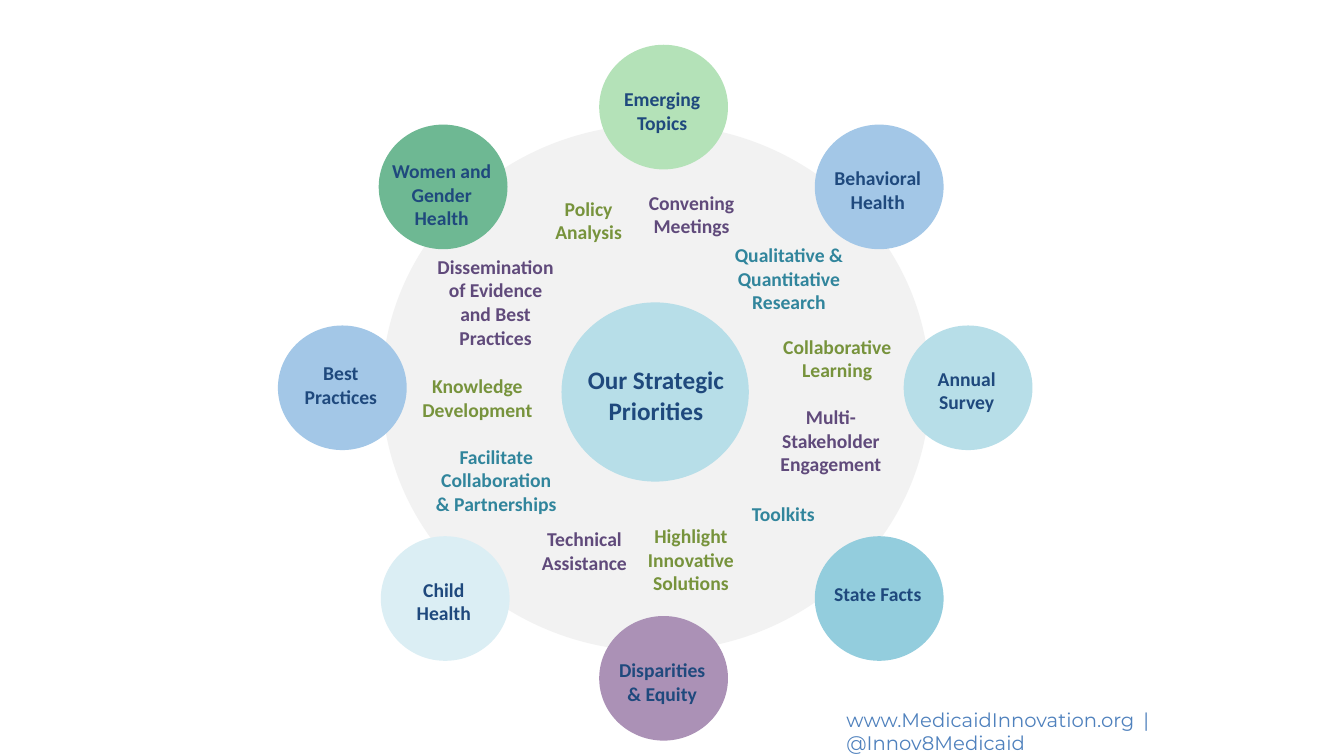
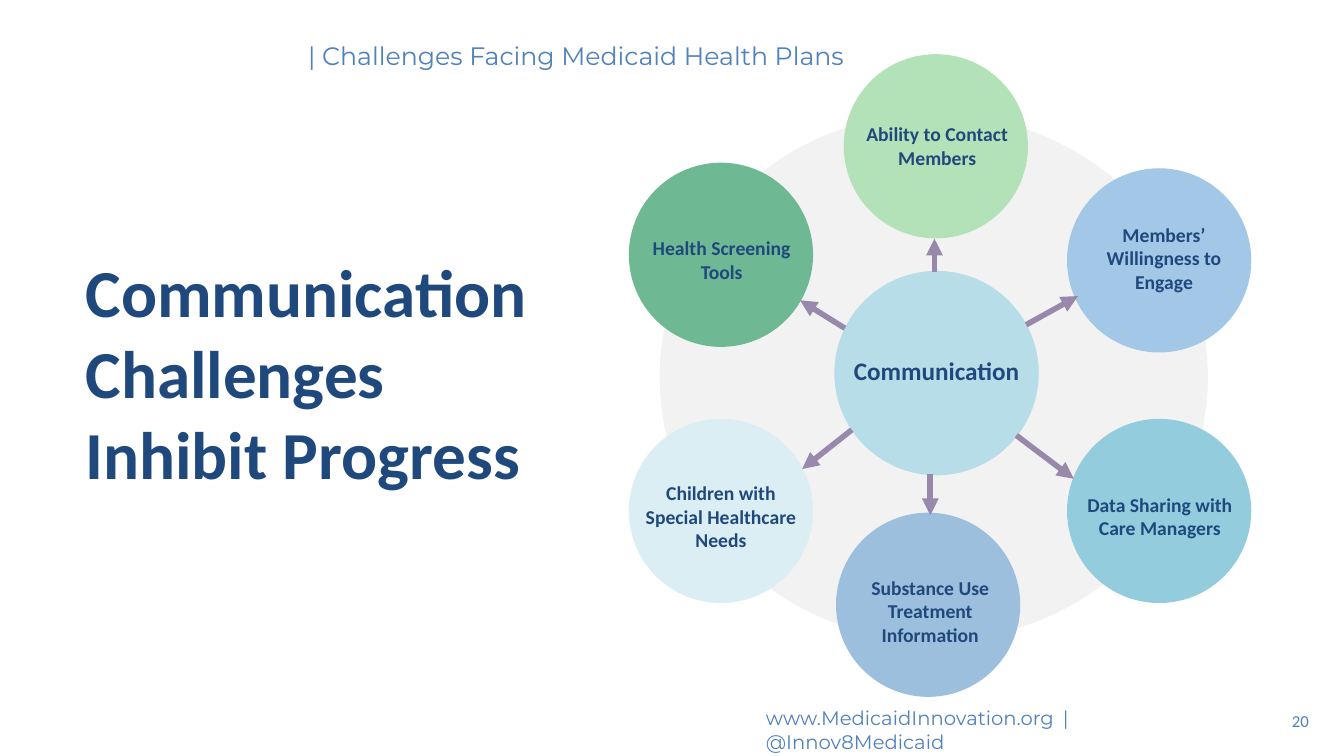
from dataclasses import dataclass

from lxml import etree
from pptx import Presentation
from pptx.dml.color import RGBColor
from pptx.enum.shapes import MSO_CONNECTOR, MSO_SHAPE
from pptx.enum.text import MSO_ANCHOR, MSO_AUTO_SIZE, PP_ALIGN
from pptx.oxml.ns import qn
from pptx.util import Pt

OVAL = MSO_SHAPE.OVAL
STRAIGHT = MSO_CONNECTOR.STRAIGHT
LEFT, CENTER, RIGHT = PP_ALIGN.LEFT, PP_ALIGN.CENTER, PP_ALIGN.RIGHT
TOP, MIDDLE = MSO_ANCHOR.TOP, MSO_ANCHOR.MIDDLE
FIT_HEIGHT = MSO_AUTO_SIZE.SHAPE_TO_FIT_TEXT


@dataclass(frozen=True)
class Theme:
    body_font: str = "Calibri"
    accent_font: str = "Montserrat"
    title_size: int = 48
    hub_size: int = 18
    label_size: int = 14
    number_size: int = 12
    navy: str = "1F497D"
    blue: str = "4F81BD"
    wheel: str = "F2F2F2"
    aqua: str = "B7DEE8"
    mint: str = "B4E2B8"
    green: str = "6EB893"
    sky: str = "A3C7E7"
    ice: str = "DBEEF4"
    mauve: str = "AB91B6"
    teal: str = "93CDDD"
    steel: str = "9CBFDD"
    arrow: str = "9888AC"
    olive_text: str = "77933C"
    teal_text: str = "31859C"
    purple_text: str = "604A7B"


THEME = Theme()


class Deck:
    def __init__(self, theme):
        self.theme = theme
        self.presentation = Presentation()
        self.presentation.slide_width = Pt(960)
        self.presentation.slide_height = Pt(540)
        self.slide = None

    def new_slide(self):
        self.slide = self.presentation.slides.add_slide(self.presentation.slide_layouts[6])

    def text(self, content, left, top, width, height, *, size=None, font=None, color=None,
             bold=False, align=LEFT, anchor=TOP, wrap=True):
        box = self.slide.shapes.add_textbox(Pt(left), Pt(top), Pt(width), Pt(height))
        frame = box.text_frame
        frame.word_wrap = wrap
        frame.vertical_anchor = anchor
        frame.text = content
        for paragraph in frame.paragraphs:
            paragraph.alignment = align
            for run in paragraph.runs:
                run.font.size = Pt(size or self.theme.label_size)
                run.font.name = font or self.theme.body_font
                run.font.bold = bold
                run.font.color.rgb = RGBColor.from_string(color or self.theme.navy)
        return frame

    def label(self, content, center_x, top, width, lines, **style):
        """Centred bold text whose box height follows its number of lines."""
        size = style.get("size", self.theme.label_size)
        frame = self.text(content, center_x - width / 2, top, width, 7.2 + lines * size * 1.2,
                          bold=True, align=CENTER, **style)
        frame.auto_size = FIT_HEIGHT

    def circle(self, center_x, center_y, width, height, color):
        disc = self.slide.shapes.add_shape(OVAL, Pt(center_x - width / 2), Pt(center_y - height / 2),
                                           Pt(width), Pt(height))
        disc.shadow.inherit = False
        disc.fill.solid()
        disc.fill.fore_color.rgb = RGBColor.from_string(color)
        disc.line.color.rgb = RGBColor.from_string(color)
        disc.line.width = Pt(2)

    def wheel(self, center_x, center_y):
        self.circle(center_x, center_y, 389.5, 374.4, self.theme.wheel)

    def arrow(self, start, end):
        spoke = self.slide.shapes.add_connector(STRAIGHT, *map(Pt, start + end))
        spoke.line.color.rgb = RGBColor.from_string(self.theme.arrow)
        spoke.line.width = Pt(4)
        etree.SubElement(spoke.line._get_or_add_ln(), qn("a:tailEnd"), type="triangle")
        etree.SubElement(spoke._element.spPr, qn("a:effectLst"))

    def footer(self, left, top):
        frame = self.text("www.MedicaidInnovation.org", left, top, 360, 24.5,
                          font=self.theme.accent_font, color=self.theme.blue, wrap=False)
        paragraph = frame.paragraphs[0]
        for content, spacing in ((" | ", "250"), ("@Innov8Medicaid", "0")):
            run = paragraph.add_run()
            run.text = content
            run.font.size = Pt(self.theme.label_size)
            run.font.name = self.theme.accent_font
            run.font.color.rgb = RGBColor.from_string(self.theme.blue)
            run._r.get_or_add_rPr().set("spc", spacing)


def build_priorities(deck):
    t = deck.theme
    deck.new_slide()
    deck.wheel(468.5, 277)
    deck.circle(468, 280, 131.8, 126, t.aqua)
    deck.label("Our Strategic Priorities", 468.5, 257, 126, 2, size=t.hub_size)

    # Colour, centre x, centre y, topic, label top, lines
    topics = (
        (t.mint, 474, 76.5, "Emerging Topics", 58.5, 2),
        (t.green, 316.5, 133.5, "Women and Gender Health", 110, 3),
        (t.sky, 244.5, 277, "Best\nPractices", 254.5, 2),
        (t.ice, 318, 427.5, "Child\nHealth", 409, 2),
        (t.mauve, 474, 484.5, "Disparities\n& Equity", 466.5, 2),
        (t.teal, 628, 427.5, "State Facts", 412, 1),
        (t.aqua, 691.5, 277, "Annual Survey", 258.5, 2),
        (t.sky, 628, 133.5, "Behavioral\nHealth", 115, 2),
    )
    for color, x, y, topic, label_top, lines in topics:
        deck.circle(x, y, 90, 87, color)
        deck.label(topic, x - 1, label_top, 97.2, lines)

    # Activity, centre x, top, width, lines, colour
    activities = (
        ("Knowledge Development", 341, 263.5, 97.2, 2, t.olive_text),
        ("Facilitate Collaboration & Partnerships", 354.5, 314, 103.7, 3, t.teal_text),
        ("Technical Assistance", 417.5, 373, 97.2, 2, t.purple_text),
        ("Highlight Innovative Solutions", 493.5, 371, 97.2, 3, t.olive_text),
        ("Multi-Stakeholder Engagement", 593.5, 286, 97.2, 3, t.purple_text),
        ("Collaborative Learning", 598, 235.5, 97.2, 2, t.olive_text),
        ("Qualitative & Quantitative Research", 563.5, 170, 97.2, 3, t.teal_text),
        ("Dissemination of Evidence and Best Practices", 354, 178.5, 100.8, 4, t.purple_text),
        ("Policy Analysis", 420.5, 137, 76.3, 2, t.olive_text),
        ("Convening Meetings", 494, 132.5, 76.3, 2, t.purple_text),
        ("Toolkits", 559.5, 355, 76.3, 1, t.teal_text),
    )
    for activity, x, top, width, lines, color in activities:
        deck.label(activity, x, top, width, lines, color=color)
    deck.footer(597.5, 502)


def build_challenges(deck):
    t = deck.theme
    deck.new_slide()
    deck.footer(540, 501)
    deck.text("20", 718, 500.5, 224, 28.8, size=t.number_size, color=t.blue,
              align=RIGHT, anchor=MIDDLE)
    deck.wheel(667, 269.5)
    deck.circle(669, 266.5, 144, 144, t.aqua)

    # Colour, centre x, centre y, challenge, label centre x, label top, width, lines
    challenges = (
        (t.mint, 668.5, 104.5, "Ability to Contact Members", 669.5, 83.5, 146.2, 2),
        (t.green, 515, 182, "Health Screening Tools", 515.5, 165, 142.6, 2),
        (t.ice, 515, 365, "Children with\vSpecial Healthcare Needs", 515, 340, 139.7, 3),
        (t.steel, 663, 432, "Substance Use Treatment Information", 664.5, 407.5, 131.8, 3),
        (t.teal, 828, 365, "Data Sharing with Care Managers", 828.5, 348.5, 131.8, 2),
        (t.sky, 828, 186, "Members’ Willingness to Engage", 831.5, 155.5, 139.7, 3),
    )
    for color, x, y, challenge, label_x, label_top, width, lines in challenges:
        deck.circle(x, y, 129.6, 129.6, color)
        deck.label(challenge, label_x, label_top, width, lines)

    spokes = (
        ((608.5, 307), (573, 335)),
        ((667.5, 194.5), (667.5, 170.5)),
        ((733, 232), (770, 211.5)),
        ((726, 311), (767, 342)),
        ((664.5, 338.5), (664.5, 368)),
        ((603.5, 234.5), (571.5, 214.5)),
    )
    for start, end in spokes:
        deck.arrow(start, end)
    deck.label("Communication", 669, 250.5, 145.4, 1, size=t.hub_size)

    deck.text("Communication Challenges Inhibit Progress", 54, 102, 348, 327,
              size=t.title_size, bold=True, anchor=MIDDLE)
    deck.text("| Challenges Facing Medicaid Health Plans", 213, 25, 441, 29,
              size=t.hub_size, font=t.accent_font, color=t.blue)


def main():
    deck = Deck(THEME)
    build_priorities(deck)
    build_challenges(deck)
    deck.presentation.save("out.pptx")


if __name__ == "__main__":
    main()
